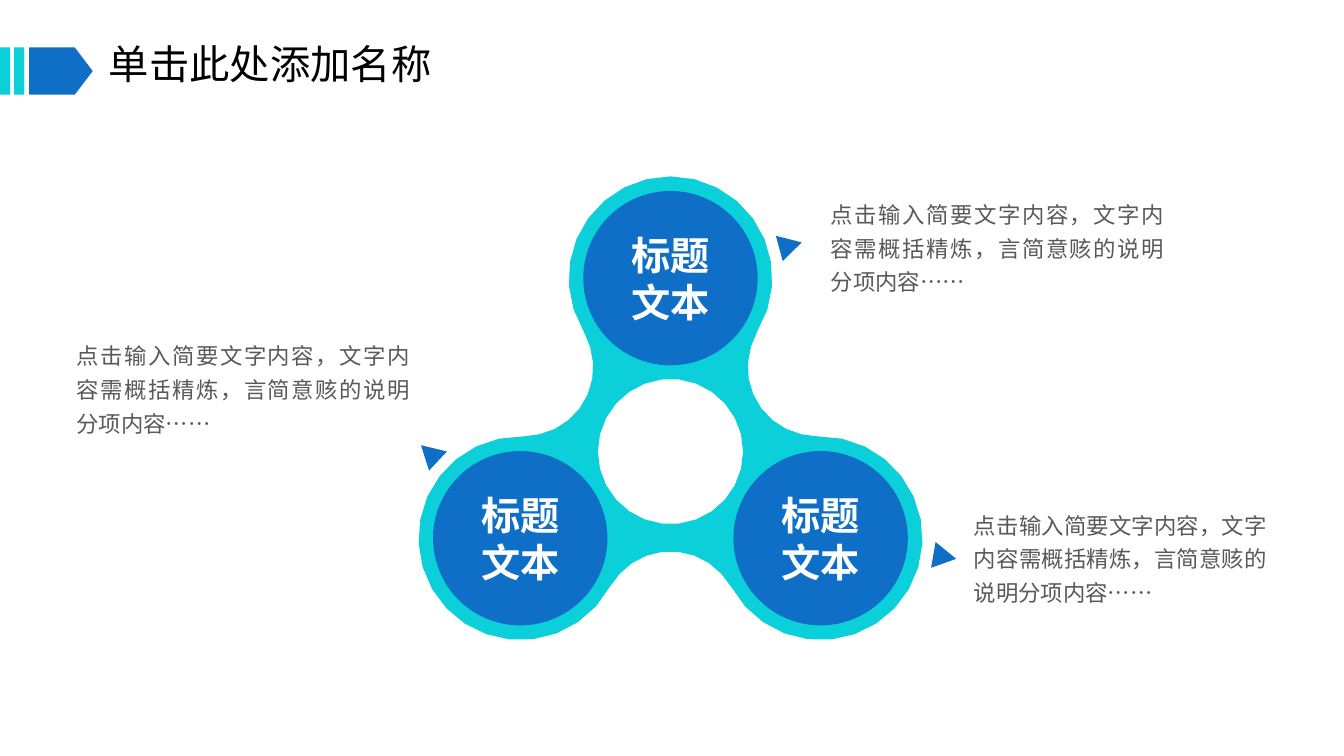
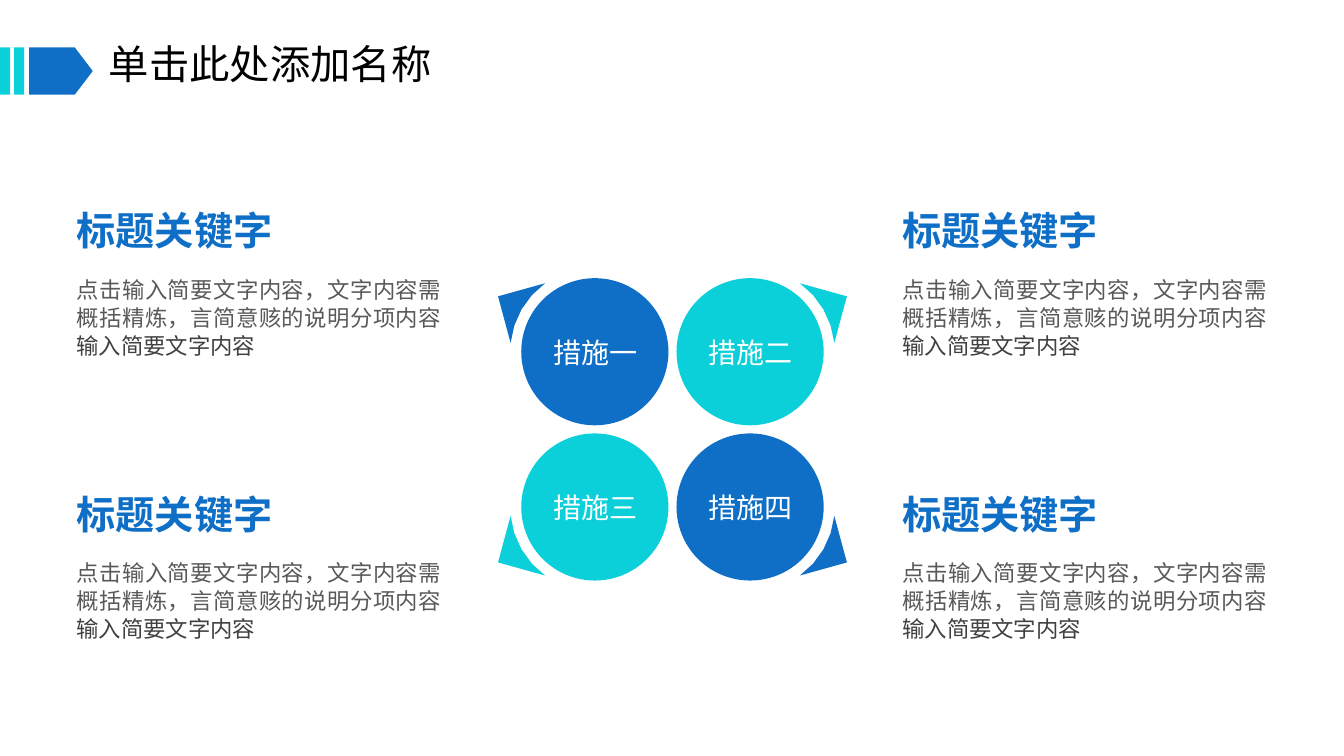
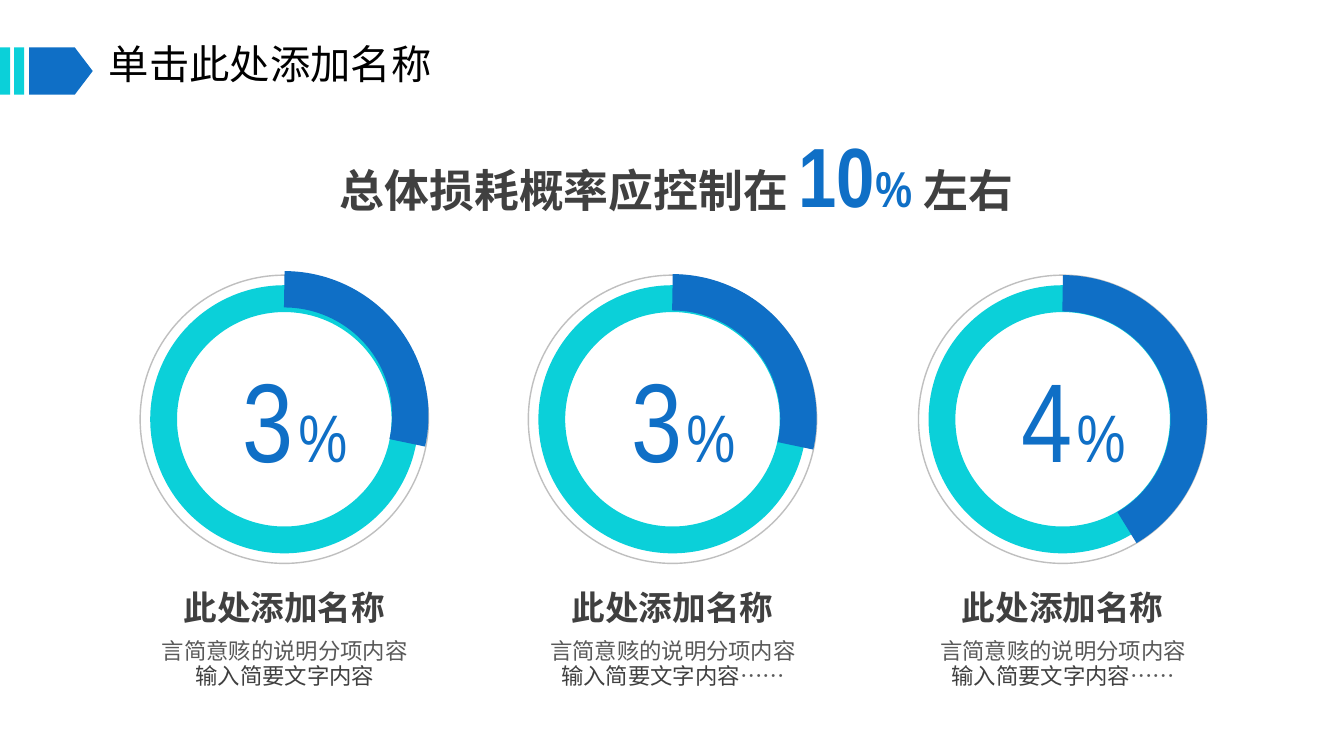
import math

import pptx
import pptx.dml.color
import pptx.enum.shapes
import pptx.enum.text
import pptx.oxml
import pptx.oxml.ns
import pptx.util

Inches = pptx.util.Inches
Pt = pptx.util.Pt
RGB = pptx.dml.color.RGBColor
SHAPE = pptx.enum.shapes.MSO_SHAPE
ALIGN = pptx.enum.text.PP_ALIGN
ANCHOR = pptx.enum.text.MSO_ANCHOR
AUTO = pptx.enum.text.MSO_AUTO_SIZE

BLUE = RGB(0x0F, 0x6F, 0xC6)
CYAN = RGB(0x0B, 0xD0, 0xD9)
BLACK = RGB(0, 0, 0)
WHITE = RGB(255, 255, 255)
DARK = RGB(0x40, 0x40, 0x40)
GREY = RGB(0x59, 0x59, 0x59)
SILVER = RGB(0xBF, 0xBF, 0xBF)

CJK = "Noto Sans CJK SC"
NARROW = "Arial Narrow"


def style(size, color, bold=False, name=CJK):
    return {"size": Pt(size), "color": color, "bold": bold, "name": name}


TITLE = style(28.8, BLACK)
BODY = style(16, GREY)
BODY_DARK = style(16, DARK)
HEADING = style(28, BLUE, True)
LOBE_LABEL = style(28, WHITE, True)
MEASURE_LABEL = style(20, WHITE)
CAPTION = style(24, DARK, True)
STATEMENT = style(32, DARK, True)


def add_run(p, text, fmt, spacing=None):
    r = p.add_run()
    r.text = text
    for key, value in fmt.items():
        if key == "color":
            r.font.color.rgb = value
        else:
            setattr(r.font, key, value)
    rPr = r.font._element
    if spacing:
        rPr.set("spc", str(spacing))
    ea = pptx.oxml.parse_xml(
        f'<a:ea {pptx.oxml.ns.nsdecls("a")} typeface="{CJK}"/>')
    rPr.append(ea)


def fill_text(tf, runs, align=ALIGN.LEFT, line=None):
    frame = {"word_wrap": True, "auto_size": AUTO.NONE,
             "vertical_anchor": ANCHOR.TOP, "margin_left": 0,
             "margin_right": 0, "margin_top": 0, "margin_bottom": 0}
    for key, value in frame.items():
        setattr(tf, key, value)
    p = tf.paragraphs[0]
    p.alignment = align
    p.line_spacing = line
    for run in runs:
        add_run(p, *run)


def add_text(s, x, y, w, h, runs, **layout):
    sp = s.shapes.add_textbox(Inches(x), Inches(y), Inches(w), Inches(h))
    fill_text(sp.text_frame, runs, **layout)
    return sp


def paint(sp, fill=None, line=None, width=1):
    sp.shadow.inherit = False
    if fill is None:
        sp.fill.background()
    else:
        sp.fill.solid()
        sp.fill.fore_color.rgb = fill
    if line is None:
        sp.line.fill.background()
    else:
        sp.line.color.rgb = line
        sp.line.width = Pt(width)


def add_shape(s, kind, x, y, w, h, adjust=(), rotation=0, **colors):
    sp = s.shapes.add_shape(kind, Inches(x), Inches(y), Inches(w), Inches(h))
    for i, value in enumerate(adjust):
        sp.adjustments[i] = value
    sp.rotation = rotation
    paint(sp, **colors)


def add_disc(s, cx, cy, radius, fill):
    add_shape(s, SHAPE.OVAL, cx - radius, cy - radius,
              2 * radius, 2 * radius, fill=fill)


def polar(cx, cy, radius, degrees):
    angle = math.radians(degrees)
    return cx + radius * math.cos(angle), cy + radius * math.sin(angle)


def arc(cx, cy, radius, start, stop):
    steps = math.ceil(abs(stop - start) / 14)
    return [polar(cx, cy, radius, start + (stop - start) * i / steps)
            for i in range(steps + 1)]


def add_outline(s, contours, fill):
    contours = [[(Inches(x), Inches(y)) for x, y in c] for c in contours]
    builder = s.shapes.build_freeform(*contours[0][0])
    for i, points in enumerate(contours):
        if i:
            builder.move_to(*points[0])
        builder.add_line_segments(points[1:], close=True)
    paint(builder.convert_to_shape(), fill=fill)


def new_slide(prs):
    s = prs.slides.add_slide(prs.slide_layouts[5])
    title = s.shapes.title
    box = {"left": 1.08, "top": 0.44, "width": 5.51, "height": 0.55}
    for key, value in box.items():
        setattr(title, key, Inches(value))
    fill_text(title.text_frame, [("单击此处添加名称", TITLE)], line=0.9)
    add_shape(s, SHAPE.PENTAGON, 0.29, 0.47, 0.63, 0.47, [0.38], fill=BLUE)
    for x in (0.14, 0):
        add_shape(s, SHAPE.RECTANGLE, x, 0.47, 0.1, 0.47, fill=CYAN)
    return s


def spinner_slide(prs):
    s = new_slide(prs)
    hub = (6.65, 4.48)
    lobe_reach, lobe_radius = 1.72, 1.01
    notch_reach, notch_radius = 1.67, 0.68
    lobe_angles = (-90, 30, 150)
    half = math.degrees(math.atan2(
        notch_reach * math.sin(math.pi / 3),
        notch_reach * math.cos(math.pi / 3) - lobe_reach))
    edge = []
    for a in lobe_angles:
        edge += arc(*polar(*hub, lobe_reach, a), lobe_radius,
                    a - half, a + half)
        edge += arc(*polar(*hub, notch_reach, a + 60), notch_radius,
                    a + half - 180, a - half - 60)[1:-1]
    add_outline(s, [edge, arc(*hub, 0.72, 0, 360)], CYAN)

    note = "点击输入简要文字内容，文字内容需概括精炼，言简意赅的说明分项内容……"
    for x, y, w in ((8.24, 1.93, 3.31), (9.66, 5.01, 2.91),
                    (0.76, 3.33, 3.31)):
        add_text(s, x, y, w, 1.01, [(note, BODY)],
                 align=ALIGN.JUSTIFY, line=Pt(24))
    for x, y, rotation in ((4.13, 4.38, 313), (7.71, 2.32, 74.9),
                           (9.24, 5.41, 99.9)):
        add_shape(s, SHAPE.ISOSCELES_TRIANGLE, x, y, 0.26, 0.23,
                  rotation=rotation, fill=BLUE)
    for a in lobe_angles:
        cx, cy = polar(*hub, lobe_reach, a)
        add_disc(s, cx, cy, 0.865, BLUE)
        add_text(s, cx - 0.47, cy - 0.47, 0.94, 0.94,
                 [("标题文本", LOBE_LABEL)], align=ALIGN.CENTER)


def measures_slide(prs):
    s = new_slide(prs)
    measures = (("措施一", None), ("措施二", CYAN),
                ("措施三", None), ("措施四", None))
    for i, (label, label_fill) in enumerate(measures):
        row, col = divmod(i, 2)
        fill = BLUE if row == col else CYAN
        cx, cy = 5.9 + 1.54 * col, 3.49 + 1.54 * row
        sx, sy = 2 * col - 1, 2 * row - 1
        corner = arc(0, 0, 0.84, 6, 54) + [(0.96, 0.55)]
        add_outline(s, [[(cx + sx * x, cy + sy * y) for x, y in corner]],
                    fill)
        add_disc(s, cx, cy, 0.73, fill)
        sp = add_text(s, cx - 0.66, cy - 0.16, 1.33, 0.34,
                      [(label, MEASURE_LABEL)], align=ALIGN.CENTER)
        paint(sp, fill=label_fill)

        x, y = (0.76, 8.95)[col], 2.05 + 2.81 * row
        add_text(s, x, y + 0.68, 3.62, 0.84,
                 [("点击输入简要文字内容，文字内容需概括精炼，言简意赅的说明分项内容",
                   BODY), ("输入简要文字内容", BODY_DARK)],
                 align=ALIGN.JUSTIFY, line=Pt(20))
        add_text(s, x, y, 2.04, 0.47, [("标题关键字", HEADING)])


def add_gauge(s, x, arc_y, end, digit, tail):
    add_shape(s, SHAPE.OVAL, x, 2.73, 2.86, 2.86, line=SILVER)
    add_shape(s, SHAPE.DONUT, x + 0.1, 2.83, 2.66, 2.66, [0.1], fill=CYAN)
    add_text(s, x + 1.02, 3.48, 1.27, 1.35,
             [(digit, style(80, BLUE, name=NARROW), 300),
              ("%", style(48, BLUE, name=NARROW), 300)])
    add_shape(s, SHAPE.ARC, x + 0.18, arc_y, 2.5, 2.5, [162, end],
              line=BLUE, width=26)
    add_text(s, x + 0.41, 5.82, 2.04, 0.4, [("此处添加名称", CAPTION)],
             align=ALIGN.CENTER)
    add_text(s, x + 0.18, 6.35, 2.51, 0.48,
             [("言简意赅的说明分项内容", BODY),
              ("输入简要文字内容", BODY_DARK)] + tail,
             align=ALIGN.CENTER, line=Pt(17.4))


def loss_slide(prs):
    s = new_slide(prs)
    add_text(s, 3.37, 1.23, 6.93, 1.01,
             [("总体损耗概率应控制在 ", STATEMENT),
              ("10", style(60, BLUE, True, NARROW)),
              ("% ", style(36, BLUE, True, NARROW)),
              ("左右", STATEMENT)])
    dots = [("……", BODY)]
    for gauge in ((1.39, 2.87, 7.58, "3", []),
                  (5.24, 2.9, 7.58, "3", dots),
                  (9.11, 2.91, 35.58, "4", dots)):
        add_gauge(s, *gauge)


def main():
    prs = pptx.Presentation()
    prs.slide_width = Inches(13.33)
    prs.slide_height = Inches(7.5)
    spinner_slide(prs)
    measures_slide(prs)
    loss_slide(prs)
    prs.save("out.pptx")


if __name__ == "__main__":
    main()
